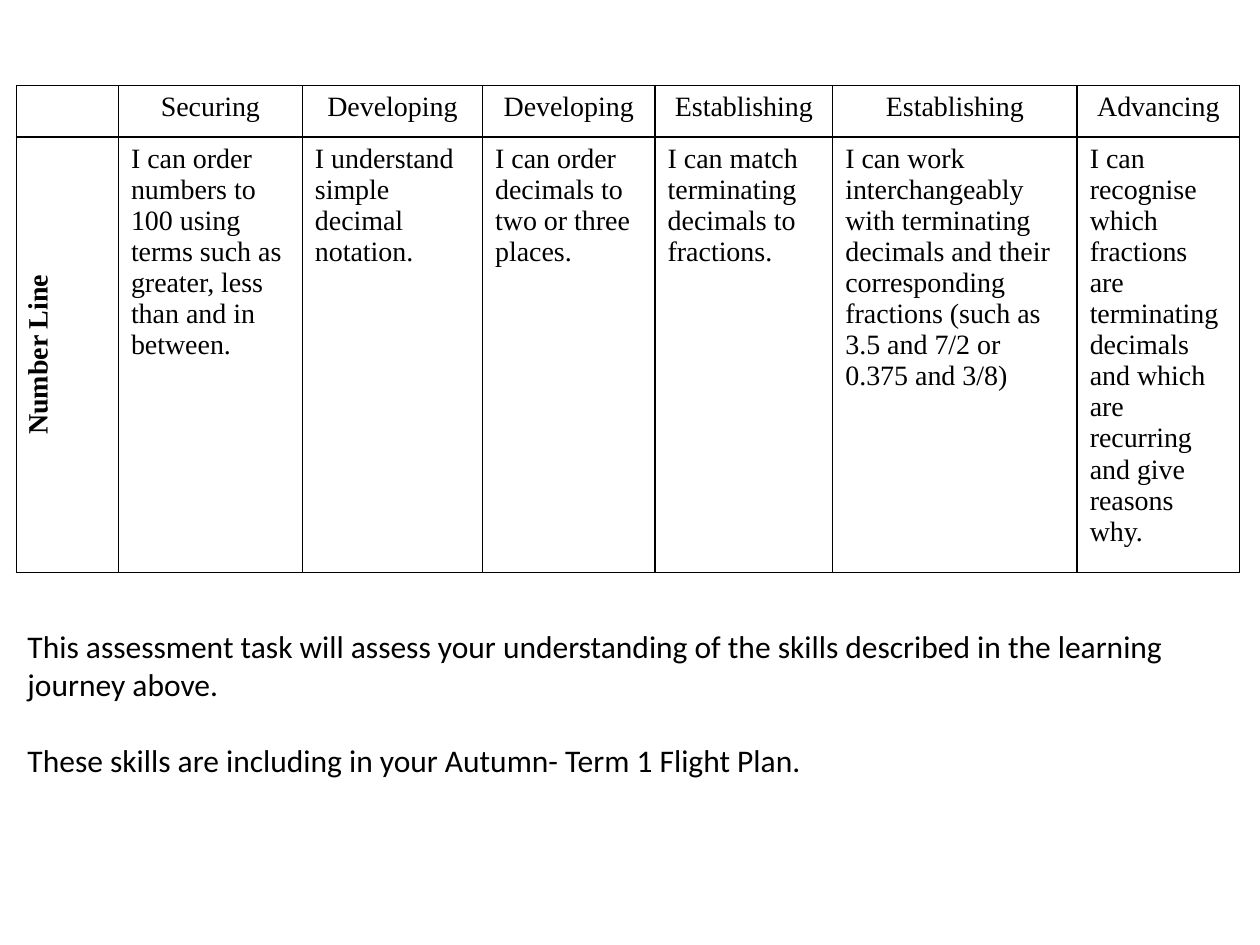
from pptx import Presentation
from pptx.dml.color import RGBColor
from pptx.enum.text import MSO_AUTO_SIZE, PP_ALIGN
from pptx.oxml import parse_xml
from pptx.oxml.ns import nsdecls
from pptx.util import Inches, Pt


def color(code):
    return RGBColor.from_string(code)


class Page:
    ink = "000000"
    serif = "Times New Roman"
    sans = "Calibri"

    def __init__(self, deck):
        self.slide = deck.slides.add_slide(deck.slide_layouts[6])

    def style(self, para, face, size, bold=False):
        font = para.font
        font.name, font.size, font.bold = face, Pt(size), bold
        font.color.rgb = color(self.ink)

    def border(self, cell):
        props = cell._tc.get_or_add_tcPr()
        for spot, side in enumerate(("lnL", "lnR", "lnT", "lnB")):
            props.insert(spot, parse_xml(
                f'<a:{side} {nsdecls("a")} w="12700"><a:solidFill>'
                f'<a:srgbClr val="{self.ink}"/></a:solidFill></a:{side}>'))

    def cell(self, cell, words, center, bold):
        cell.fill.background()
        self.border(cell)
        if not words:
            return
        cell.text = words
        para = cell.text_frame.paragraphs[0]
        para.alignment = PP_ALIGN.CENTER if center else PP_ALIGN.LEFT
        self.style(para, self.serif, 16, bold)

    def table(self, left, top, widths, heights, rows):
        grid = self.slide.shapes.add_table(
            len(rows), len(widths), Inches(left), Inches(top),
            Inches(sum(widths)), Inches(sum(heights))).table
        grid.first_row = grid.horz_banding = False
        for col, width in zip(grid.columns, widths):
            col.width = Inches(width)
        for r, (row, height) in enumerate(zip(rows, heights)):
            grid.rows[r].height = Inches(height)
            for c, words in enumerate(row):
                label = r > 0 and c == 0
                self.cell(grid.cell(r, c), words, r == 0 or label, label)
        return grid

    def text(self, left, top, width, height, lines, gap):
        box = self.slide.shapes.add_textbox(
            Inches(left), Inches(top), Inches(width), Inches(height))
        frame = box.text_frame
        frame.word_wrap = True
        frame.auto_size = MSO_AUTO_SIZE.SHAPE_TO_FIT_TEXT
        frame.text = "\n".join(lines)
        for para in frame.paragraphs:
            self.style(para, self.sans, 18)
        for para in frame.paragraphs[1:]:
            para.space_before = Pt(gap)


deck = Presentation()
deck.slide_width, deck.slide_height = Inches(10), Inches(7.5)
page = Page(deck)

# Learning journey
levels = ["", "Securing", "Developing", "Developing",
          "Establishing", "Establishing", "Advancing"]
skills = [
    "Number Line",
    "I can order numbers to 100 using terms such as greater, less than "
    "and in between.",
    "I understand simple decimal notation.",
    "I can order decimals to two or three places.",
    "I can match terminating decimals to fractions.",
    "I can work interchangeably with terminating decimals and their "
    "corresponding fractions (such as 3.5 and 7/2 or 0.375 and 3/8)",
    "I can recognise which fractions are terminating decimals and which "
    "are recurring and give reasons why.",
]
grid = page.table(0.13, 0.68, [0.81, 1.46, 1.43, 1.37, 1.41, 1.94, 1.29],
                  [0.4, 3.46], [levels, skills])

# Row label reads upwards
grid.cell(1, 0)._tc.get_or_add_tcPr().set("vert", "vert270")

# Task note
page.text(0.12, 4.93, 9.76, 1.31, [
    "This assessment task will assess your understanding of the skills "
    "described in the learning journey above.",
    "These skills are including in your Autumn- Term 1 Flight Plan.",
], 22)

deck.save("out.pptx")
